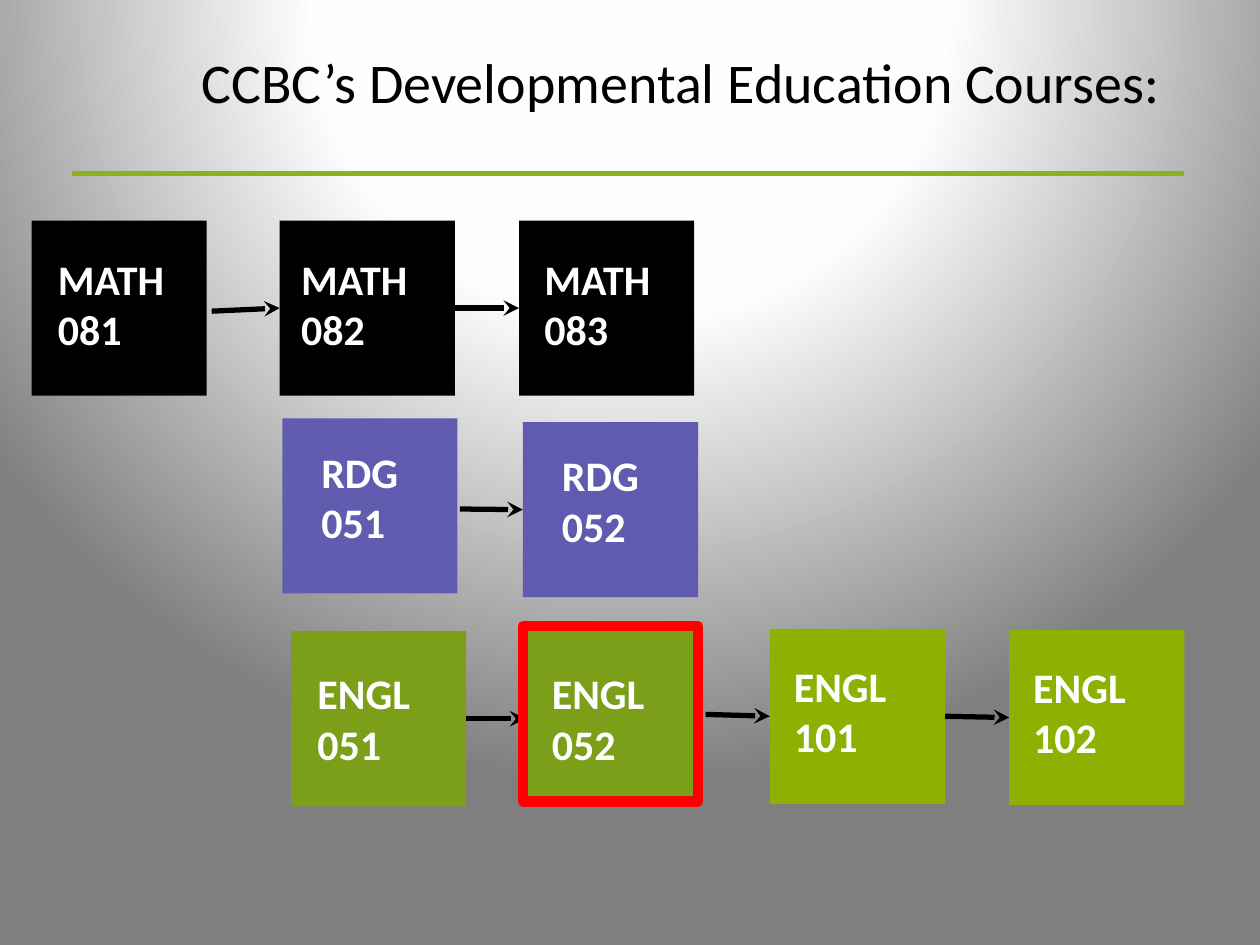
"""Build the slide of developmental course sequences."""
from lxml import etree
from pptx import Presentation
from pptx import util as u
from pptx.dml.color import RGBColor
from pptx.enum import shapes, text
from pptx.oxml import parse_xml
from pptx.oxml.ns import qn, nsdecls

TITLE = "CCBC’s Developmental Education Courses:"
SIDE = 1.39
BLACK, GREEN, LIME = "000000", "7C9F1A", "8EB000"
# subject, number, left, top, fill, text inset left and top
COURSES = [
    ("MATH", "081", 0.25, 1.75, BLACK, 0.21, 0.26),
    ("MATH", "082", 2.22, 1.75, BLACK, 0.17, 0.26),
    ("MATH", "083", 4.12, 1.75, BLACK, 0.2, 0.26),
    ("RDG", "051", 2.24, 3.32, "615CB0", 0.31, 0.22),
    ("RDG", "052", 4.15, 3.35, "605BAE", 0.31, 0.22),
    ("ENGL", "051", 2.31, 5.01, GREEN, 0.21, 0.29),
    ("ENGL", "052", 4.17, 5.01, GREEN, 0.21, 0.29),
    ("ENGL", "101", 6.11, 4.99, LIME, 0.19, 0.25),
    ("ENGL", "102", 8.01, 5, LIME, 0.19, 0.25),
]
# course before, course after, start of the arrow where it is not joined
STEPS = [
    ("MATH 081", "MATH 082", (1.68, 2.47)),
    ("MATH 082", "MATH 083", None),
    ("RDG 051", "RDG 052", (3.65, 4.04)),
    ("ENGL 051", "ENGL 052", None),
    ("ENGL 052", "ENGL 101", (5.6, 5.67)),
    ("ENGL 101", "ENGL 102", None),
]
STOPS = [(0, "FFFFFF"), (40, "FEFEFE"), (100, "7F7F7F")]


def rgb(code):
    """Turn a hex string into a colour."""
    return RGBColor.from_string(code)


def shade(slide):
    """Give the slide its round grey gradient."""
    stops = "".join(
        f'<a:gs pos="{pos * 1000}"><a:srgbClr val="{code}"/></a:gs>' for pos, code in STOPS
    )
    slide.background.fill.solid()
    props = slide.background._cSld.find(qn("p:bg")).find(qn("p:bgPr"))
    props.replace(props[0], parse_xml(
        f'<a:gradFill {nsdecls("a")} rotWithShape="1"><a:gsLst>{stops}</a:gsLst>'
        '<a:path path="circle"><a:fillToRect l="50000" t="-80000" r="50000" b="180000"/>'
        "</a:path></a:gradFill>"))


def style(para, size, code, bold=False):
    """Set the font of every run in a paragraph."""
    for run in para.runs:
        font = run.font
        font.name, font.size, font.bold = "Calibri", u.Pt(size), bold
        font.color.rgb = rgb(code)


def square(slide, left, top):
    """Add a plain square without shadow."""
    box = slide.shapes.add_shape(
        shapes.MSO_SHAPE.RECTANGLE, *map(u.Inches, (left, top, SIDE, SIDE)))
    box.shadow.inherit = False
    return box


def course(slide, label, left, top, fill, inset, drop):
    """Add a filled square with its course label."""
    box = square(slide, left, top)
    box.fill.solid()
    box.fill.fore_color.rgb = rgb(fill)
    box.line.fill.background()
    frame = box.text_frame
    frame.text = label
    frame.word_wrap = True
    frame.vertical_anchor = text.MSO_ANCHOR.TOP
    frame.margin_left, frame.margin_top = u.Inches(inset), u.Inches(drop)
    frame.margin_right = frame.margin_bottom = 0
    for para in frame.paragraphs:
        para.alignment = text.PP_ALIGN.LEFT
        style(para, 24, "FFFFFF", True)
    return box


def line(slide, start, end, code):
    """Add a straight line without shadow."""
    link = slide.shapes.add_connector(
        shapes.MSO_CONNECTOR.STRAIGHT, *map(u.Inches, (*start, *end)))
    link.line.color.rgb = rgb(code)
    link.line.width = u.Pt(3)
    etree.SubElement(link._element.spPr, qn("a:effectLst"))
    return link


def arrow(slide, prev, then, start):
    """Lead an arrow from one course to the next."""
    link = line(slide, start or (0, 0), (0, 0), BLACK)
    if not start:
        link.begin_connect(prev, 3)
    link.end_connect(then, 1)
    etree.SubElement(link.line._get_or_add_ln(), qn("a:tailEnd"), type="stealth")


def main():
    """Build and save the slide."""
    deck = Presentation()
    deck.slide_width, deck.slide_height = u.Inches(10), u.Inches(7.5)
    slide = deck.slides.add_slide(deck.slide_layouts[6])
    shade(slide)
    line(slide, (0.57, 1.38), (9.4, 1.38), "8DB01D")

    boxes = {}
    for name, num, *rest in COURSES:
        boxes[f"{name} {num}"] = course(slide, f"{name}\n{num}", *rest)
    for prev, then, start in STEPS:
        arrow(slide, boxes[prev], boxes[then], start)

    mark = square(slide, 4.15, 4.97)
    mark.fill.background()
    mark.line.color.rgb = rgb("FF0000")
    mark.line.width = u.Pt(6)

    title = slide.shapes.add_textbox(*map(u.Inches, (1.5, 0.33, 8.08, 0.64)))
    title.text_frame.word_wrap = True
    title.text_frame.text = TITLE
    style(title.text_frame.paragraphs[0], 32, BLACK)
    deck.save("out.pptx")


if __name__ == "__main__":
    main()
